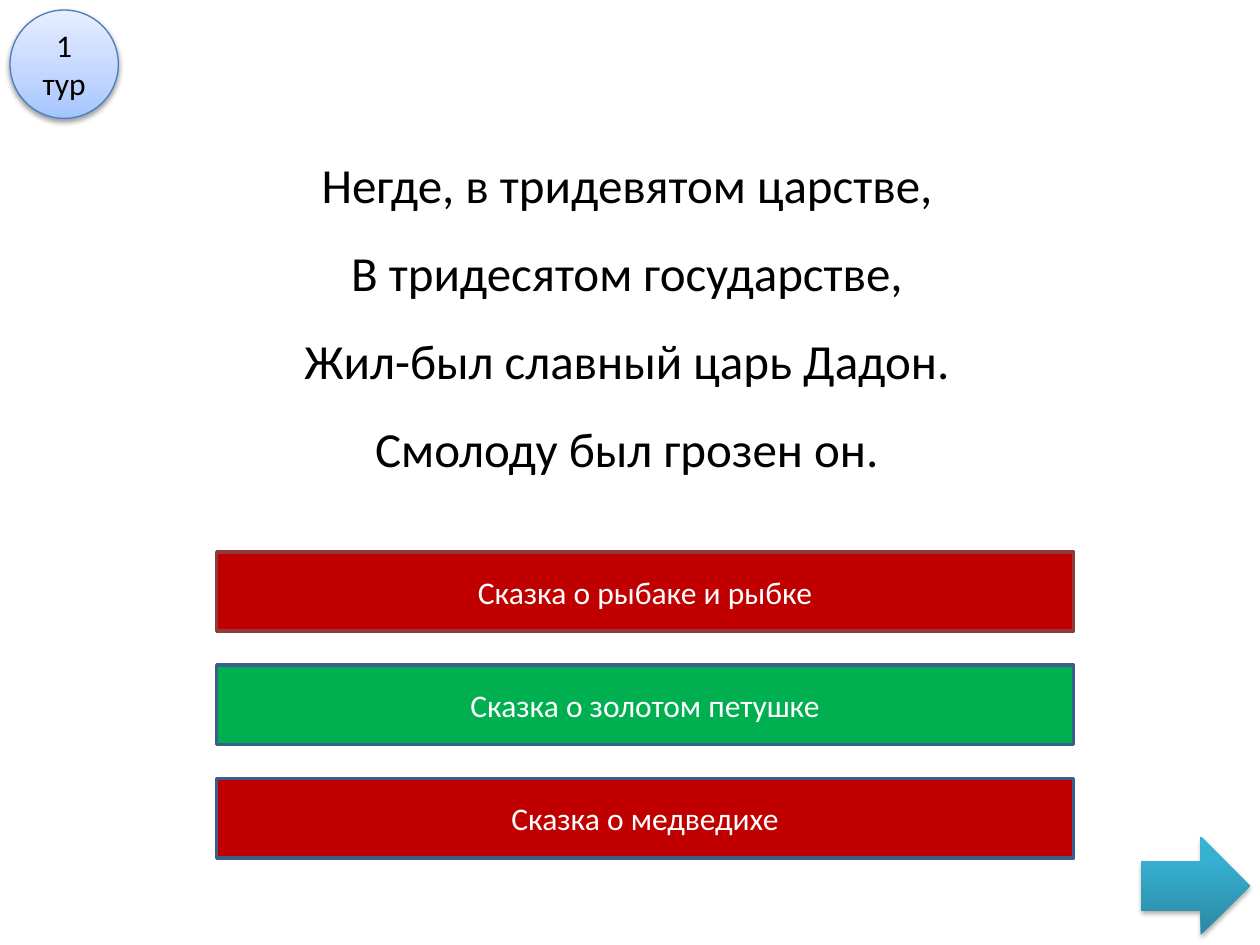
from dataclasses import dataclass

from lxml import etree
from pptx import Presentation
from pptx.dml.color import RGBColor
from pptx.enum.shapes import MSO_SHAPE
from pptx.enum.text import MSO_ANCHOR, MSO_AUTO_SIZE, PP_ALIGN
from pptx.oxml.ns import qn
from pptx.shapes.autoshape import Shape
from pptx.slide import Slide
from pptx.util import Inches, Pt

RECTANGLE, OVAL, ARROW = MSO_SHAPE.RECTANGLE, MSO_SHAPE.OVAL, MSO_SHAPE.RIGHT_ARROW
CENTER, MIDDLE, NO_AUTOFIT = PP_ALIGN.CENTER, MSO_ANCHOR.MIDDLE, MSO_AUTO_SIZE.NONE
TITLE_AND_CONTENT = 1


@dataclass(frozen=True)
class Theme:
    font: str = "Calibri"
    verse_size: int = 28
    label_size: int = 18
    dark: str = "000000"
    light: str = "FFFFFF"
    wrong: str = "C00000"
    right: str = "00B050"
    blue_edge: str = "3A5F8C"
    red_edge: str = "8E3B39"
    badge_edge: str = "4B7EBC"
    badge_stops: tuple = ((0, "A4C4FF"), (35, "BFD4FF"), (100, "E6EEFF"))
    arrow_stops: tuple = ((0, "2A88A2"), (80, "37B1D2"), (100, "34B4D6"))


@dataclass(frozen=True)
class Box:
    left: float
    top: float
    width: float
    height: float

    def lengths(self) -> tuple:
        return tuple(Inches(n) for n in (self.left, self.top, self.width, self.height))


@dataclass(frozen=True)
class Answer:
    text: str
    fill: str
    edge: str


THEME = Theme()
VERSE = (
    "Негде, в тридевятом царстве,",
    "В тридесятом государстве,",
    "Жил-был славный царь Дадон.",
    "Смолоду был грозен он.",
)
ANSWERS = (
    Answer("Сказка о рыбаке и рыбке", THEME.wrong, THEME.red_edge),
    Answer("Сказка о золотом петушке", THEME.right, THEME.blue_edge),
    Answer("Сказка о медведихе", THEME.wrong, THEME.blue_edge),
)
FIRST_ANSWER = Box(1.72, 4.38, 6.8, 0.63)
ANSWER_STEP = 0.9
VERSE_BOX = Box(2.19, 0.94, 5.47, 3.13)
BADGE_BOX = Box(0.08, 0.08, 0.86, 0.86)
ARROW_BOX = Box(9.06, 6.64, 0.86, 0.78)


def add_plain_shape(page: Slide, kind: MSO_SHAPE, box: Box) -> Shape:
    shape = page.shapes.add_shape(kind, *box.lengths())
    shape.shadow.inherit = False
    return shape


def set_edge(shape: Shape, color: str, width: float) -> None:
    shape.line.color.rgb = RGBColor.from_string(color)
    shape.line.width = Pt(width)


def set_text(shape: Shape, text: str, size: int, color: str) -> None:
    frame = shape.text_frame
    frame.word_wrap = True
    para = frame.paragraphs[0]
    para.text = text
    para.alignment = CENTER
    para.font.name = THEME.font
    para.font.size = Pt(size)
    para.font.color.rgb = RGBColor.from_string(color)


def add_color(parent, color: str):
    return etree.SubElement(parent, qn("a:srgbClr"), val=color)


def set_gradient(shape: Shape, stops: tuple) -> None:
    """Fill from the bottom edge up with (percent, colour) stops."""
    shape.fill.gradient()
    shape.fill.gradient_angle = 90
    stop_list = shape._element.spPr.find(".//" + qn("a:gsLst"))
    for stop in list(stop_list):
        stop_list.remove(stop)
    for percent, color in stops:
        add_color(etree.SubElement(stop_list, qn("a:gs"), pos=str(percent * 1000)), color)


def set_shadow(shape: Shape, opacity: int, distance: float) -> None:
    effects = shape._element.spPr.find(qn("a:effectLst"))
    shadow = etree.SubElement(
        effects, qn("a:outerShdw"), blurRad=str(Pt(3.1)), dist=str(Pt(distance)),
        dir="5400000", rotWithShape="0")
    color = add_color(shadow, THEME.dark)
    etree.SubElement(color, qn("a:alpha"), val=str(opacity * 1000))


def add_answer(page: Slide, answer: Answer, row: int) -> None:
    first = FIRST_ANSWER
    box = Box(first.left, first.top + row * ANSWER_STEP, first.width, first.height)
    shape = add_plain_shape(page, RECTANGLE, box)
    shape.fill.solid()
    shape.fill.fore_color.rgb = RGBColor.from_string(answer.fill)
    set_edge(shape, answer.edge, 2)
    shape.text_frame.vertical_anchor = MIDDLE
    set_text(shape, answer.text, THEME.label_size, THEME.light)


def add_verse(page: Slide) -> None:
    body = page.placeholders[1]
    body.left, body.top, body.width, body.height = VERSE_BOX.lengths()
    body.text_frame.auto_size = NO_AUTOFIT
    para = body.text_frame.paragraphs[0]
    properties = para._p.get_or_add_pPr()
    properties.set("marL", str(Inches(0.1)))
    properties.set("indent", "0")
    etree.SubElement(properties, qn("a:buNone"))
    para.line_spacing = 1.5
    para.space_before = Pt(0)
    set_text(body, "\v".join(VERSE), THEME.verse_size, THEME.dark)


def add_badge(page: Slide) -> None:
    badge = add_plain_shape(page, OVAL, BADGE_BOX)
    set_gradient(badge, THEME.badge_stops)
    set_edge(badge, THEME.badge_edge, 0.75)
    set_shadow(badge, 38, 1.6)
    badge.text_frame.vertical_anchor = MIDDLE
    set_text(badge, "1 тур", THEME.label_size, THEME.dark)


def add_next_arrow(page: Slide) -> None:
    arrow = add_plain_shape(page, ARROW, ARROW_BOX)
    set_gradient(arrow, THEME.arrow_stops)
    arrow.line.fill.background()
    set_shadow(arrow, 35, 1.8)


def main() -> None:
    deck = Presentation()
    deck.slide_width, deck.slide_height = Inches(10), Inches(7.5)
    page = deck.slides.add_slide(deck.slide_layouts[TITLE_AND_CONTENT])
    title = page.shapes.title._element
    title.getparent().remove(title)
    add_verse(page)
    for row, answer in enumerate(ANSWERS):
        add_answer(page, answer, row)
    add_badge(page)
    add_next_arrow(page)
    deck.save("out.pptx")


if __name__ == "__main__":
    main()
